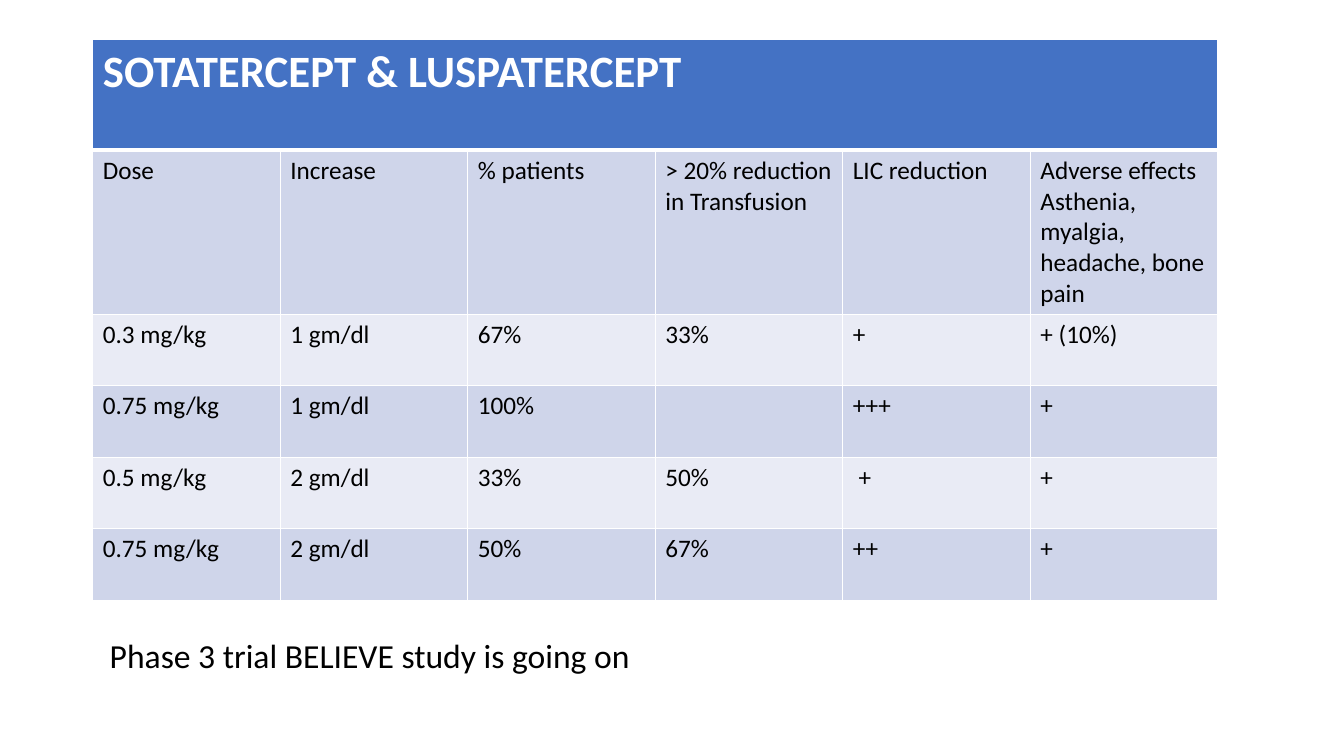
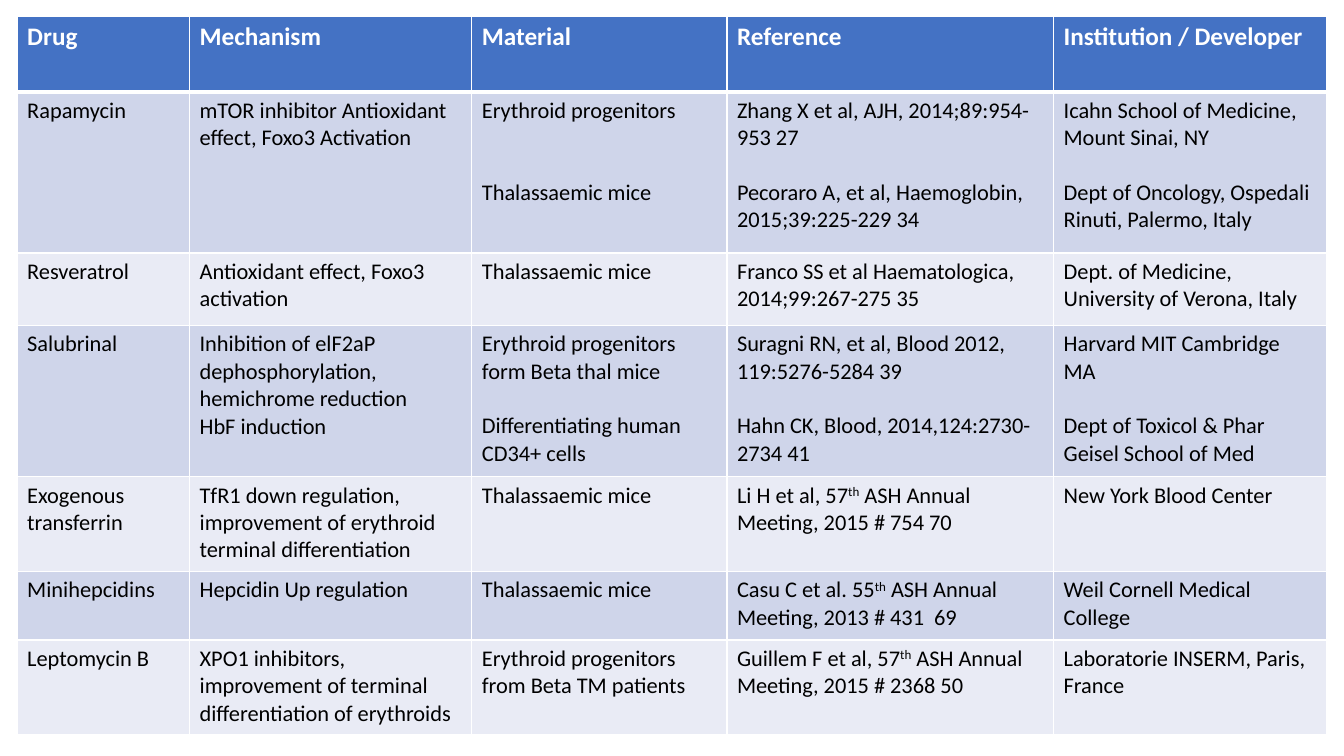
"""Build two slides of tables on drugs for thalassaemia."""
from lxml.etree import SubElement
from pptx import Presentation
from pptx.dml.color import RGBColor
from pptx.oxml.ns import qn
from pptx.util import Inches, Pt

COLORS = {"header": "4472C4", "odd": "CFD5EA", "even": "E9EBF5", "white": "FFFFFF", "black": "000000"}
FONT = "Calibri"
LINE_HEIGHT = 1.22


def write_text(text_frame, text, size, color, bold=False):
    """Write lines, turning empty ones into spacing and ^marked^ parts into superscript."""
    paragraph, gap = text_frame.paragraphs[0], 0
    for number, line in enumerate(text.split("\n")):
        if not line:
            gap += 1
            continue
        if number:
            paragraph = text_frame.add_paragraph()
        if gap:
            paragraph.space_before = Pt(round(gap * size * LINE_HEIGHT, 1))
        gap = 0
        for index, part in enumerate(line.split("^")):
            run = paragraph.add_run()
            run.text = part
            run.font.name, run.font.size, run.font.bold = FONT, Pt(size), bold
            run.font.color.rgb = RGBColor.from_string(COLORS[color])
            if index % 2:
                run._r.get_or_add_rPr().set("baseline", "30000")


def add_grid(slide, left, top, widths, heights, rows, header_size, body_size):
    """Add a banded table with white rules and a heavier rule under the header."""
    table = slide.shapes.add_table(
        len(rows), len(widths), Inches(left), Inches(top), Inches(sum(widths)), Inches(sum(heights))
    ).table
    for column, width in zip(table.columns, widths):
        column.width = Inches(width)
    for row, height in zip(table.rows, heights):
        row.height = Inches(height)
    for row_index, texts in enumerate(rows):
        is_header = row_index == 0
        band = "header" if is_header else ("even", "odd")[row_index % 2]
        for column_index in range(len(widths)):
            cell = table.cell(row_index, column_index)
            properties = cell._tc.get_or_add_tcPr()
            for side in ("lnL", "lnR", "lnT", "lnB"):
                heavy = (row_index, side) in ((0, "lnB"), (1, "lnT"))
                line = SubElement(properties, qn(f"a:{side}"), w=str(Pt(3 if heavy else 1)))
                SubElement(SubElement(line, qn("a:solidFill")), qn("a:srgbClr"), val=COLORS["white"])
            cell.fill.solid()
            cell.fill.fore_color.rgb = RGBColor.from_string(COLORS[band])
            if column_index < len(texts):
                size, color = (header_size, "white") if is_header else (body_size, "black")
                write_text(cell.text_frame, texts[column_index], size, color, is_header)
    return table


presentation = Presentation()
presentation.slide_width, presentation.slide_height = Inches(13.33), Inches(7.5)
blank_layout = presentation.slide_layouts[6]

dose_rows = [
    ["SOTATERCEPT & LUSPATERCEPT"],
    ["Dose", "Increase", "% patients", "> 20% reduction in Transfusion", "LIC reduction",
     "Adverse effects\nAsthenia, myalgia, headache, bone pain"],
    ["0.3 mg/kg", "1 gm/dl", "67%", "33%", "+", "+ (10%)"],
    ["0.75 mg/kg", "1 gm/dl", "100%", "", "+++", "+"],
    ["0.5 mg/kg", "2 gm/dl", "33%", "50%", " +", "+"],
    ["0.75 mg/kg", "2 gm/dl", "50%", "67%", "++", "+"],
]
slide = presentation.slides.add_slide(blank_layout)
dose_table = add_grid(slide, 0.92, 0.39, [1.86] * 6, [1.1, 1.61] + [0.71] * 4, dose_rows, 32, 18)
dose_table.cell(0, 0).merge(dose_table.cell(0, 5))
trial_note = slide.shapes.add_textbox(Inches(0.99), Inches(6.25), Inches(11.16), Inches(0.5))
trial_note.text_frame.word_wrap = True
write_text(trial_note.text_frame, "Phase 3 trial BELIEVE study is going on", 24, "black")

drug_rows = [
    ["Drug", "Mechanism", "Material", "Reference", "Institution / Developer"],
    ["Rapamycin", "mTOR inhibitor Antioxidant effect, Foxo3 Activation",
     "Erythroid progenitors\n\n\nThalassaemic mice",
     "Zhang X et al, AJH, 2014;89:954-953 27\n\nPecoraro A, et al, Haemoglobin, 2015;39:225-229 34",
     "Icahn School of Medicine, Mount Sinai, NY\n\nDept of Oncology, Ospedali Rinuti, Palermo, Italy"],
    ["Resveratrol", "Antioxidant effect, Foxo3 activation", "Thalassaemic mice",
     "Franco SS et al Haematologica, 2014;99:267-275 35",
     "Dept. of Medicine, University of Verona, Italy"],
    ["Salubrinal", "Inhibition of elF2aP dephosphorylation, hemichrome reduction\nHbF induction",
     "Erythroid progenitors form Beta thal mice\n\nDifferentiating human CD34+ cells",
     "Suragni RN, et al, Blood 2012, 119:5276-5284 39\n\nHahn CK, Blood, 2014,124:2730-2734 41",
     "Harvard MIT Cambridge MA\n\nDept of Toxicol & Phar\nGeisel School of Med"],
    ["Exogenous transferrin", "TfR1 down regulation, improvement of erythroid terminal differentiation",
     "Thalassaemic mice", "Li H et al, 57^th^ ASH Annual Meeting, 2015 # 754 70",
     "New York Blood Center"],
    ["Minihepcidins", "Hepcidin Up regulation", "Thalassaemic mice",
     "Casu C et al. 55^th^ ASH Annual Meeting, 2013 # 431  69", "Weil Cornell Medical College"],
    ["Leptomycin B", "XPO1 inhibitors, improvement of terminal differentiation of erythroids",
     "Erythroid progenitors from Beta TM patients",
     "Guillem F et al, 57^th^ ASH Annual Meeting, 2015 # 2368 50",
     "Laboratorie INSERM, Paris, France"],
]
slide = presentation.slides.add_slide(blank_layout)
drug_widths = [1.71, 2.8, 2.53, 3.24, 2.71]
drug_heights = [0.75, 1.6, 0.72, 1.5, 0.94, 0.68, 0.94]
add_grid(slide, 0.17, 0.16, drug_widths, drug_heights, drug_rows, 18, 16)

presentation.save("out.pptx")
